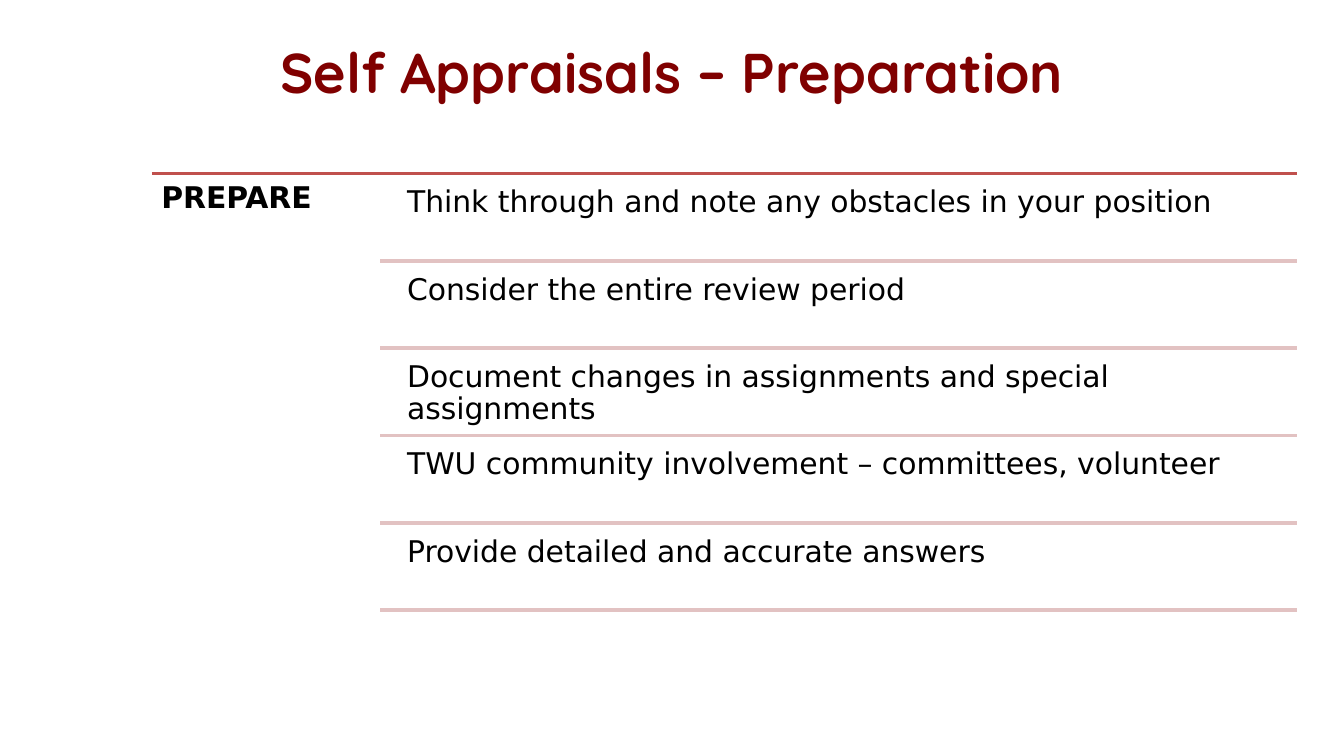
from lxml.etree import SubElement
from pptx import Presentation
from pptx.dml.color import RGBColor
from pptx.enum.shapes import MSO_CONNECTOR as Conn
from pptx.enum.text import MSO_ANCHOR as Anchor, PP_ALIGN as Align
from pptx.oxml.ns import qn
from pptx.util import Pt

# Content
TITLE = "Self Appraisals – Preparation"
LABEL = "PREPARE"
STEPS = [
    "Think through and note any obstacles in your position",
    "Consider the entire review period",
    "Document changes in assignments and special assignments",
    "TWU community involvement – committees, volunteer",
    "Provide detailed and accurate answers",
]

# Layout in points
LEFT, RULE, TEXT, RIGHT = 81.4, 203.8, 213.1, 694.8
TOP, PITCH, GAP = 92.9, 46.8, 2.3
INSET = 5


def tint(color, code):
    color.rgb = RGBColor.from_string(code)


def write(para, text, font, size, code, bold=False):
    run = para.add_run()
    run.text = text
    run.font.name, run.font.size, run.font.bold = font, Pt(size), bold
    tint(run.font.color, code)


def add_rule(left, y, code):
    rule = slide.shapes.add_connector(
        Conn.STRAIGHT, Pt(left), Pt(y), Pt(RIGHT), Pt(y))
    rule.line.width = Pt(2)
    tint(rule.line.color, code)
    SubElement(rule._element.spPr, qn("a:effectLst"))


def add_text(text, left, top, width, height, bold=False):
    box = slide.shapes.add_textbox(Pt(left), Pt(top), Pt(width), Pt(height))
    frame = box.text_frame
    frame.word_wrap = True
    frame.margin_left = frame.margin_right = Pt(INSET)
    frame.margin_top = frame.margin_bottom = Pt(INSET)
    para = frame.paragraphs[0]
    para.line_spacing = 0.9
    write(para, text, "DejaVu Sans", 16, "000000", bold)


deck = Presentation()
deck.slide_width, deck.slide_height = Pt(720), Pt(405)
slide = deck.slides.add_slide(deck.slide_layouts[5])

# Title
head = slide.shapes.title
head.left, head.top, head.width, head.height = Pt(36), Pt(16.6), Pt(648), Pt(67.5)
head.text_frame.vertical_anchor = Anchor.TOP
para = head.text_frame.paragraphs[0]
para.alignment = Align.CENTER
write(para, TITLE, "Quicksand", 30, "800000", True)

# Top rule and label
add_rule(LEFT, TOP, "C0504D")
add_text(LABEL, LEFT, TOP, 123, 236, True)

# Steps, each closed by a rule
for i, step in enumerate(STEPS):
    y = TOP + i * PITCH
    add_text(step, TEXT, y + GAP, RIGHT - TEXT, PITCH - GAP)
    add_rule(RULE, y + PITCH, "E2C2C2")

deck.save("out.pptx")
